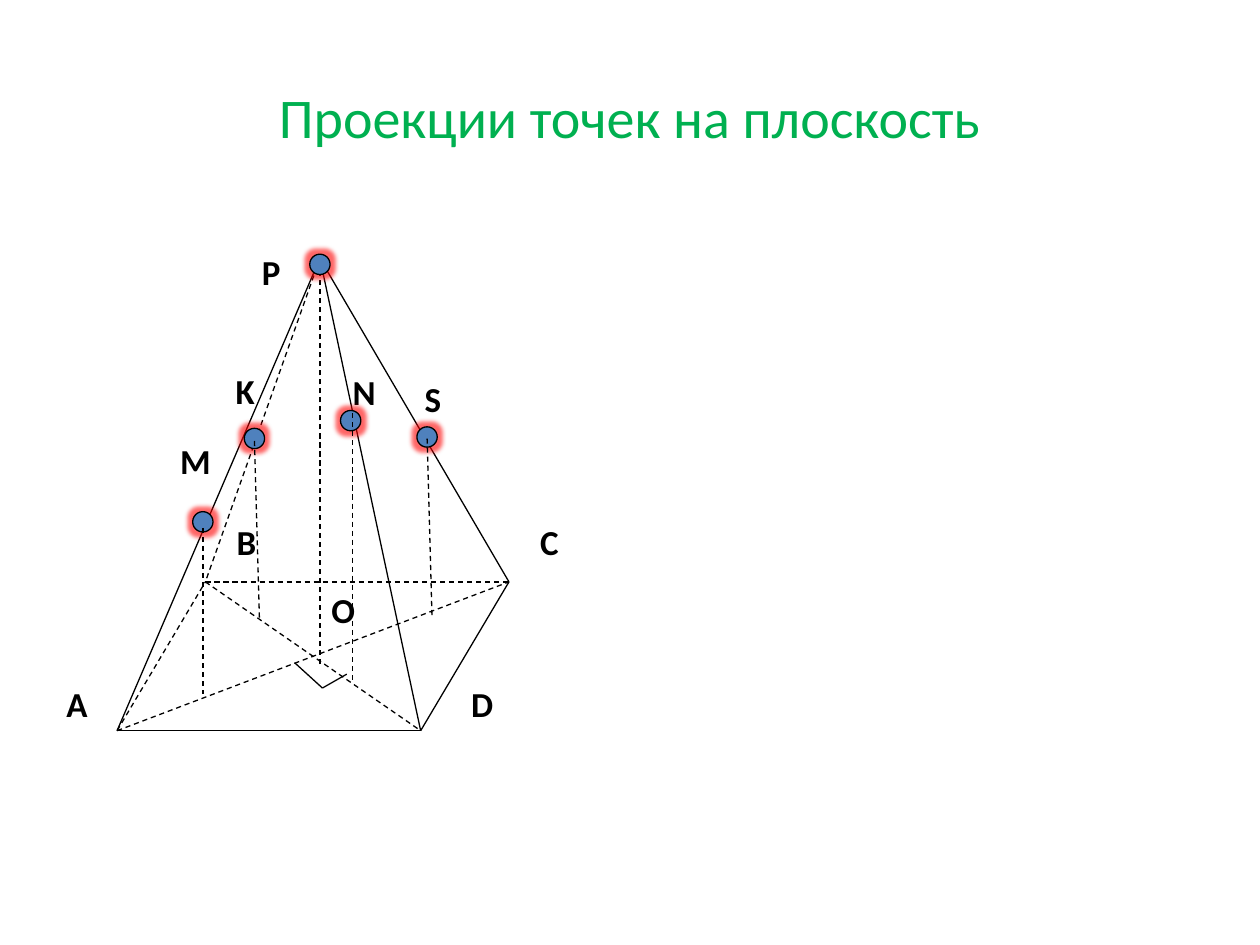
from lxml import etree
from pptx import Presentation
from pptx.dml.color import RGBColor
from pptx.enum.dml import MSO_LINE
from pptx.enum.shapes import MSO_CONNECTOR, MSO_SHAPE
from pptx.enum.text import MSO_ANCHOR, PP_ALIGN
from pptx.oxml.ns import qn
from pptx.util import Cm, Pt

STRAIGHT = MSO_CONNECTOR.STRAIGHT
DASH = MSO_LINE.DASH
OVAL = MSO_SHAPE.OVAL
MIDDLE = MSO_ANCHOR.MIDDLE
LEFT, CENTER = PP_ALIGN.LEFT, PP_ALIGN.CENTER

FONT = "Calibri"
BLACK, GREEN, BLUE, RED = "000000", "00B050", "4F81BD", "FF0000"
DOT = 0.41
LABEL_HEIGHT = 1.1

# Lengths in cm, relative to the upper left corner of the pyramid
VERTICES = {
    "A": (0, 9.52), "B": (1.78, 6.52), "C": (7.9, 6.52),
    "D": (6.12, 9.52), "P": (4.09, 0), "O": (4.09, 8.18),
}
HIDDEN_EDGES = ["AB", "PB", "AC", "BC", "BD", "OP"]
VISIBLE_EDGES = ["CD", "AD", "PA", "PD", "PC"]
RIGHT_ANGLE = [(3.58, 8.15), (4.14, 8.66), (4.63, 8.38)]
LABELS = [  # text, left, top, width
    ("А", -1.27, 8.43, 1.65), ("D", 6.89, 8.43, 1.65),
    ("C", 8.28, 5.15, 1.65), ("B", 2.16, 5.15, 1.65),
    ("M", 1.02, 3.53, 1.65), ("P", 2.67, -0.28, 1.65),
    ("O", 4.07, 6.52, 1.65), ("N", 4.5, 2.13, 0.99),
    ("K", 2.14, 2.11, 1.19), ("S", 5.95, 2.28, 0.99),
]
POINTS = [(1.73, 5.31), (4.09, 0.12), (6.25, 3.6), (2.77, 3.63), (4.71, 3.27)]
PROJECTIONS = [
    ((1.73, 5.43), (1.73, 8.79)), ((6.25, 3.63), (6.35, 7.24)),
    ((2.77, 3.68), (2.87, 7.26)), ((4.75, 3.12), (4.75, 8.51)),
]


def color(value):
    return RGBColor.from_string(value)


def add_text(slide, text, left, top, width, height, size, fill, bold=False, align=LEFT):
    box = slide.shapes.add_textbox(Cm(left), Cm(top), Cm(width), Cm(height))
    frame = box.text_frame
    frame.word_wrap = True
    frame.text = text
    paragraph = frame.paragraphs[0]
    paragraph.alignment = align
    font = paragraph.runs[0].font
    font.name, font.size, font.bold = FONT, Pt(size), bold
    font.color.rgb = color(fill)
    return box


def add_segment(slide, origin, start, end, dashed=False):
    x, y = origin
    segment = slide.shapes.add_connector(
        STRAIGHT, Cm(x + start[0]), Cm(y + start[1]), Cm(x + end[0]), Cm(y + end[1]))
    segment.line.color.rgb = color(BLACK)
    segment.line.width = Pt(0.75)
    if dashed:
        segment.line.dash_style = DASH
    etree.SubElement(segment.element.spPr, qn("a:effectLst"))


def add_glowing_point(slide, x, y):
    """Draw a dot centred on (x, y) with a soft red glow."""
    dot = slide.shapes.add_shape(
        OVAL, Cm(x - DOT / 2), Cm(y - DOT / 2), Cm(DOT), Cm(DOT))
    dot.fill.solid()
    dot.fill.fore_color.rgb = color(BLUE)
    dot.line.color.rgb = color(BLACK)
    dot.line.width = Pt(0.75)
    dot.shadow.inherit = False
    effects = dot.element.spPr.find(qn("a:effectLst"))
    glow = etree.SubElement(effects, qn("a:glow"), rad=str(Pt(5)))
    tint = etree.SubElement(glow, qn("a:srgbClr"), val=RED)
    etree.SubElement(tint, qn("a:alpha"), val="60000")


def add_title(slide, left, top, width, height):
    title = add_text(slide, "Проекции точек на плоскость",
                     left, top, width, height, 32, GREEN, align=CENTER)
    title.text_frame.vertical_anchor = MIDDLE


def add_pyramid(slide, left, top):
    origin = (left, top)
    for edges, dashed in ((HIDDEN_EDGES, True), (VISIBLE_EDGES, False)):
        for start, end in edges:
            add_segment(slide, origin, VERTICES[start], VERTICES[end], dashed)
    for start, end in zip(RIGHT_ANGLE, RIGHT_ANGLE[1:]):
        add_segment(slide, origin, start, end)
    for letter, x, y, width in LABELS:
        add_text(slide, letter, left + x, top + y, width, LABEL_HEIGHT, 20, BLACK, bold=True)
    for x, y in POINTS:
        add_glowing_point(slide, left + x, top + y)
    for point, foot in PROJECTIONS:
        add_segment(slide, origin, point, foot, dashed=True)


def main():
    deck = Presentation()
    deck.slide_width, deck.slide_height = Cm(25.4), Cm(19.05)
    slide = deck.slides.add_slide(deck.slide_layouts[6])
    add_title(slide, 0, 0.76, 25.4, 3.18)
    add_pyramid(slide, 2.36, 5.21)
    deck.save("out.pptx")


if __name__ == "__main__":
    main()
